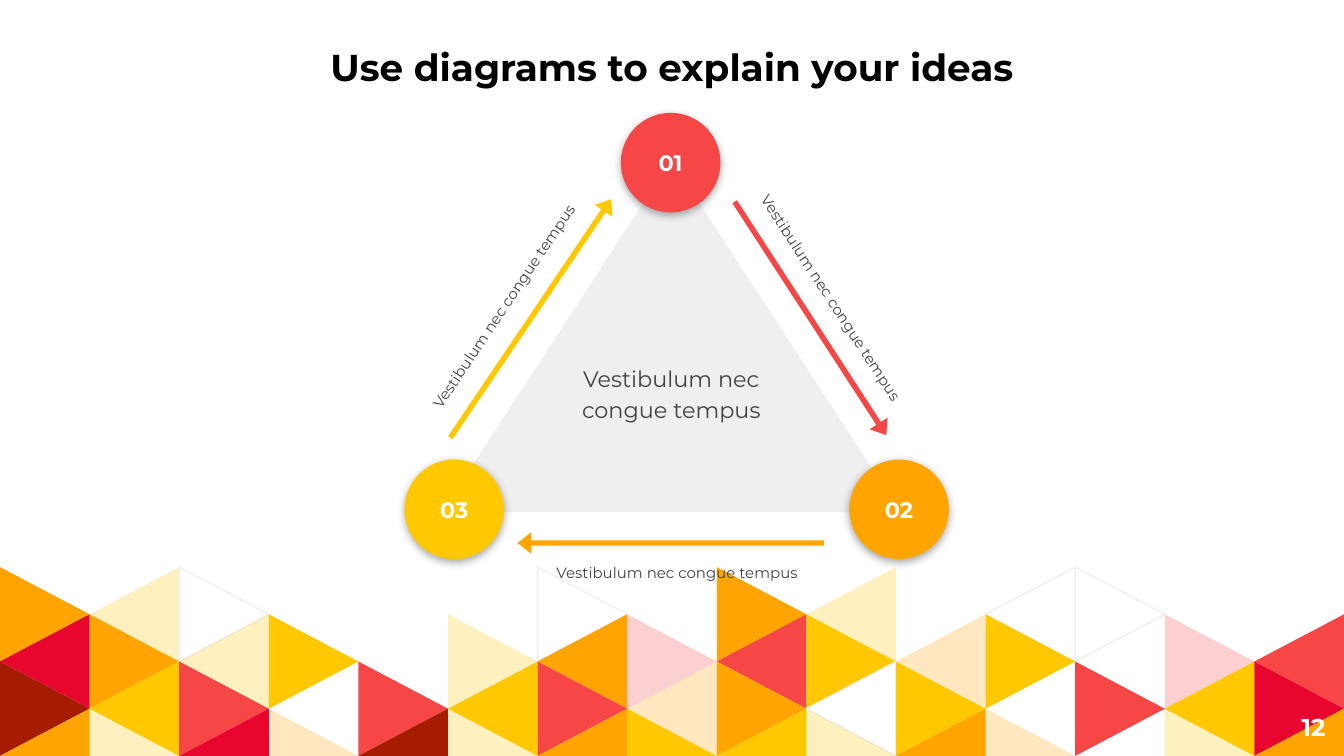
import pptx
import pptx.util
import pptx.dml.color
import pptx.enum.shapes
import pptx.enum.text
import pptx.oxml
import pptx.oxml.ns
import lxml.etree

Inches = pptx.util.Inches
Pt = pptx.util.Pt
RGBColor = pptx.dml.color.RGBColor
MSO_SHAPE = pptx.enum.shapes.MSO_SHAPE
PP_ALIGN = pptx.enum.text.PP_ALIGN
MSO_ANCHOR = pptx.enum.text.MSO_ANCHOR
qn = pptx.oxml.ns.qn

SLIDE_W = 10
SLIDE_H = SLIDE_W * 9 / 16
FONT = "Montserrat"
BLACK = RGBColor(0x00, 0x00, 0x00)
WHITE = RGBColor(0xFF, 0xFF, 0xFF)
GREY = RGBColor(0xEF, 0xEF, 0xEF)
TEXT = RGBColor(0x43, 0x43, 0x43)
ORANGE = RGBColor(0xFF, 0xA4, 0x00)
YELLOW = RGBColor(0xFF, 0xC8, 0x00)
RED = RGBColor(0xF6, 0x46, 0x46)
CRIMSON = RGBColor(0xE8, 0x06, 0x2F)
BROWN = RGBColor(0xA6, 0x1C, 0x00)

TILE_COLORS = {"O": ORANGE, "Y": YELLOW, "R": RED, "C": CRIMSON, "B": BROWN,
               "o": ORANGE, "y": YELLOW, "r": RED, "W": WHITE}
TILE_COLUMNS = ["OCBO", "yOYy", "WyRC", ".Y.o", "..RB",
                ".yYy", "WORO", ".roY", "OROY", "yYWy",
                ".oYO", "WY.o", "W.R.", ".rYy", ".RCO"]
PHRASE = "Vestibulum nec congue tempus"
STEPS = [
    ("02", ORANGE, (3.32, 2.58), (1.99, 3.2), 2.28, 180, (2.04, 3.42), 0),
    ("03", YELLOW, (0.01, 2.58), (0.95, 1.53), 2.14, 304, (0.75, 1.44), 303.9),
    ("01", RED, (1.62, 0), (3.03, 1.53), 2.07, 57, (3.18, 1.38), 57),
]


def paint(sp, color):
    sp.shadow.inherit = False
    sp.fill.solid()
    sp.fill.fore_color.rgb = color
    sp.line.fill.background()


def write(sp, text, size, color, bold=False, align=PP_ALIGN.CENTER,
          anchor=MSO_ANCHOR.TOP, spacing=None):
    tf = sp.text_frame
    tf.word_wrap = True
    tf.auto_size = pptx.enum.text.MSO_AUTO_SIZE.NONE
    tf.vertical_anchor = anchor
    tf.margin_left = tf.margin_right = Inches(0.1)
    tf.margin_top = tf.margin_bottom = Inches(0.1)
    p = tf.paragraphs[0]
    p.text = text
    p.alignment = align
    p.line_spacing = spacing
    p.font.name = FONT
    p.font.size = Pt(size)
    p.font.bold = bold
    p.font.color.rgb = color


def add_shape(s, kind, x, y, w, h, color):
    sp = s.shapes.add_shape(kind, Inches(x), Inches(y), Inches(w), Inches(h))
    paint(sp, color)
    return sp


def add_text(s, x, y, w, h, *args, **kwargs):
    sp = s.shapes.add_textbox(Inches(x), Inches(y), Inches(w), Inches(h))
    write(sp, *args, **kwargs)
    return sp


def set_alpha(sp, percent):
    clr = sp._element.spPr.find(qn("a:solidFill"))[0]
    lxml.etree.SubElement(clr, qn("a:alpha"), val=str(percent * 1000))


def add_drop_shadow(sp):
    effects = sp._element.spPr.find(qn("a:effectLst"))
    shadow = lxml.etree.SubElement(
        effects, qn("a:outerShdw"), blurRad=str(Pt(4.5)), dist=str(Pt(1.5)),
        dir="5400000", algn="bl", rotWithShape="0")
    clr = lxml.etree.SubElement(shadow, qn("a:srgbClr"), val="212121")
    lxml.etree.SubElement(clr, qn("a:alpha"), val="38000")


def add_pattern(s, left, top, width, height):
    w = width / len(TILE_COLUMNS)
    h = height / 4
    for col, codes in enumerate(TILE_COLUMNS):
        for row, code in enumerate(codes):
            if code == ".":
                continue
            base, apex = left + col * w, left + (col + 1) * w
            if (col + row) % 2:
                base, apex = apex, base
            y = top + row * h
            if row < 3:
                points = [(base, y), (apex, y + h), (base, y + 2 * h)]
            else:
                points = [(base, y), (apex, y + h), (base, y + h)]
            points = [(Inches(px), Inches(py)) for px, py in points]
            fb = s.shapes.build_freeform(*points[0])
            fb.add_line_segments(points[1:])
            sp = fb.convert_to_shape()
            paint(sp, TILE_COLORS[code])
            if code.islower():
                set_alpha(sp, 25)
            elif code == "W":
                sp.line.color.rgb = GREY
                sp.line.width = Pt(0.75)


def add_title(s, left, top, width, height):
    sp = s.shapes.title
    sp.left, sp.top = Inches(left), Inches(top)
    sp.width, sp.height = Inches(width), Inches(height)
    write(sp, "Use diagrams to explain your ideas", 20, BLACK, bold=True,
          anchor=MSO_ANCHOR.BOTTOM)


def add_step(s, left, top, number, color, circle, arrow, length, angle,
             label, label_angle):
    sp = add_shape(s, MSO_SHAPE.RIGHT_ARROW, left + arrow[0] - length / 2,
                   top + arrow[1] - 0.08, length, 0.16, color)
    sp.adjustments[0] = 0.255
    sp.adjustments[1] = 0.643
    sp.rotation = angle
    sp = add_text(s, left + label[0] - 1.09, top + label[1] - 0.19, 2.18, 0.38,
                  PHRASE, 8, TEXT, spacing=1.15)
    sp.rotation = label_angle
    sp = add_shape(s, MSO_SHAPE.OVAL, left + circle[0], top + circle[1],
                   0.74, 0.74, color)
    add_drop_shadow(sp)
    write(sp, number, 12, WHITE, bold=True, anchor=MSO_ANCHOR.MIDDLE)


def add_cycle(s, left, top):
    add_shape(s, MSO_SHAPE.ISOSCELES_TRIANGLE, left + 0.29, top + 0.35,
              3.41, 2.62, GREY)
    add_text(s, left + 1.05, top + 1.75, 1.89, 1.05, PHRASE, 12, TEXT,
             spacing=1.15)
    for step in STEPS:
        add_step(s, left, top, *step)


def main():
    prs = pptx.Presentation()
    prs.slide_width, prs.slide_height = Inches(SLIDE_W), Inches(SLIDE_H)
    s = prs.slides.add_slide(prs.slide_layouts[5])
    add_pattern(s, 0, 4.22, SLIDE_W, SLIDE_H - 4.22)
    add_title(s, 0, 0, SLIDE_W, 0.76)
    add_text(s, 9.36, 5.19, 0.6, 0.43, "12", 13, WHITE, bold=True,
             align=PP_ALIGN.RIGHT, anchor=MSO_ANCHOR.MIDDLE)
    add_cycle(s, 3, 0.84)
    prs.save("out.pptx")


if __name__ == "__main__":
    main()
